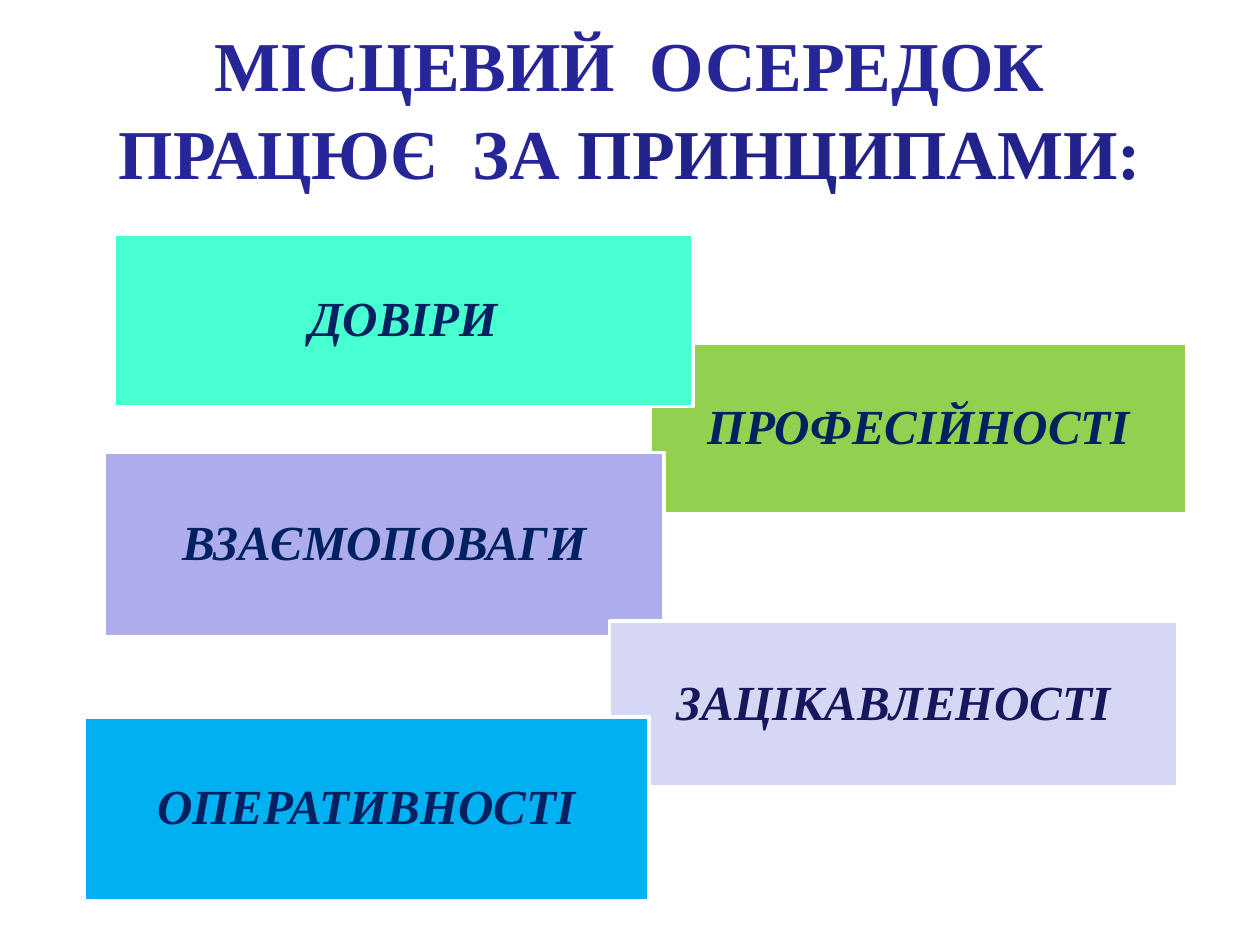
from pptx import Presentation
from pptx.dml.color import RGBColor
from pptx.enum.shapes import MSO_SHAPE as Shape
from pptx.enum.text import MSO_ANCHOR as Anchor, MSO_AUTO_SIZE as AutoSize, PP_ALIGN as Align
from pptx.util import Cm, Pt

COLORS = {
    "title": "262699", "title_end": "22228B",
    "navy": "002060", "indigo": "17175C", "white": "FFFFFF",
    "green": "92D050", "mint": "47FFD1", "lilac": "ADADEB",
    "lavender": "D6D6F5", "sky": "00B0F0",
}


def style_run(run, size, color, italic=None):
    font = run.font
    font.name = "Times New Roman"
    font.size = Pt(size)
    font.bold = True
    font.italic = italic
    font.color.rgb = RGBColor.from_string(COLORS[color])


prs = Presentation()
prs.slide_width, prs.slide_height = Cm(25.4), Cm(19.05)
slide = prs.slides.add_slide(prs.slide_layouts[5])

title = slide.shapes.title
title.left, title.top, title.width, title.height = Cm(1.9), Cm(0.53), Cm(21.6), Cm(3.18)
heading = title.text_frame
heading.word_wrap = True
heading.auto_size = AutoSize.NONE
heading.vertical_anchor = Anchor.MIDDLE
heading_line = heading.paragraphs[0]
heading_line.alignment = Align.CENTER
heading_line.line_spacing = 1.05
for words, color in [("МІСЦЕВИЙ  ОСЕРЕДОК ПРАЦЮЄ  ЗА ", "title"),
                     ("ПРИНЦИПАМИ:", "title_end")]:
    run = heading_line.add_run()
    run.text = words
    style_run(run, 40, color)

# Principles from back to front: left, top, width, height in cm
principles = [
    ("ПРОФЕСІЙНОСТІ", 13.11, 6.93, 10.82, 3.43, "green", "navy"),
    ("ДОВІРИ", 2.31, 4.72, 11.66, 3.48, "mint", "navy"),
    ("ВЗАЄМОПОВАГИ", 2.11, 9.12, 11.28, 3.71, "lilac", "navy"),
    ("ЗАЦІКАВЛЕНОСТІ", 12.29, 12.52, 11.46, 3.35, "lavender", "indigo"),
    ("ОПЕРАТИВНОСТІ", 1.7, 14.45, 11.38, 3.71, "sky", "navy"),
]
for principle, left, top, width, height, fill, ink in principles:
    block = slide.shapes.add_shape(Shape.RECTANGLE, Cm(left), Cm(top), Cm(width), Cm(height))
    block.shadow.inherit = False
    block.fill.solid()
    block.fill.fore_color.rgb = RGBColor.from_string(COLORS[fill])
    block.line.color.rgb = RGBColor.from_string(COLORS["white"])
    block.line.width = Pt(2)
    frame = block.text_frame
    frame.word_wrap = True
    frame.vertical_anchor = Anchor.MIDDLE
    frame.margin_left = frame.margin_right = frame.margin_top = frame.margin_bottom = Cm(0.3)
    frame.text = principle
    label = frame.paragraphs[0]
    label.alignment = Align.CENTER
    label.line_spacing = 0.9
    style_run(label.runs[0], 28, ink, italic=True)

prs.save("out.pptx")
